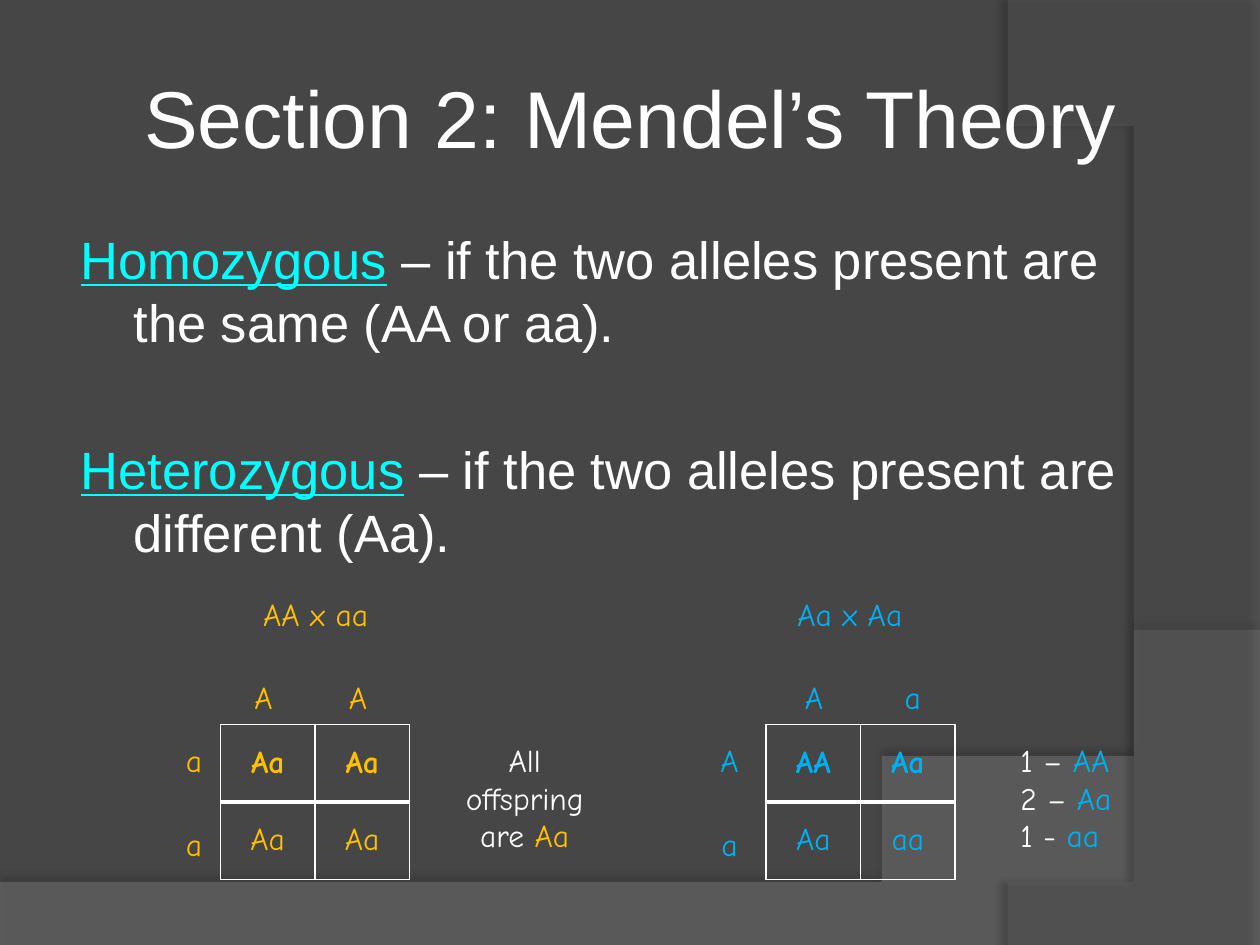
from lxml import etree
from pptx import Presentation
from pptx.dml.color import RGBColor
from pptx.enum.text import MSO_ANCHOR, MSO_AUTO_SIZE, PP_ALIGN
from pptx.oxml.ns import qn
from pptx.util import Inches, Pt

LEFT, CENTER = PP_ALIGN.LEFT, PP_ALIGN.CENTER
MIDDLE = MSO_ANCHOR.MIDDLE
NO_FIT, GROW = MSO_AUTO_SIZE.NONE, MSO_AUTO_SIZE.SHAPE_TO_FIT_TEXT

COLORS = {"background": "464646", "swoosh": "7F7F7F", "arc": "5E5E5E", "shadow": "000000",
          "white": "FFFFFF", "term": "00FFFF", "gold": "FFC000", "blue": "00B0F0"}
TITLE_FORMAT = {"name": "Arial", "size": Pt(46), "bold": False}
BODY_FORMAT = {"name": "Arial", "size": Pt(30), "bold": False}
CROSS_FORMAT = {"name": "Comic Neue", "size": Pt(18), "bold": False}


def add_runs(paragraph, runs, font_format, align=LEFT):
    paragraph.alignment = align
    for text, color in runs:
        run = paragraph.add_run()
        run.text = text
        for attribute, value in font_format.items():
            setattr(run.font, attribute, value)
        run.font.underline = color == "term"
        run.font.color.rgb = RGBColor.from_string(COLORS[color])


def add_label(box, lines, align=CENTER):
    label = slide.shapes.add_textbox(*map(Inches, box))
    frame = label.text_frame
    frame.word_wrap = True
    frame.auto_size = GROW
    for number, runs in enumerate(lines):
        paragraph = frame.add_paragraph() if number else frame.paragraphs[0]
        add_runs(paragraph, runs, CROSS_FORMAT, align)


prs = Presentation()
prs.slide_width, prs.slide_height = Inches(10), Inches(7.5)
slide = prs.slides.add_slide(prs.slide_layouts[1])
slide.background.fill.solid()
slide.background.fill.fore_color.rgb = RGBColor.from_string(COLORS["background"])

BACKDROPS = [
    ("swoosh", 45, [(0, 7.05), (0, 7.51), (10, 7.51)],
     [(10, 5.2), (5.59, 7.29), (3.91, 7.19), (0, 7.05)], (35, 4, 3.5, 270)),
    ("arc", 40, [(10, 0.02), (10, 7.5)],
     [(8.21, 7.5), (9.35, 6.19), (10.18, 3), (8, 0)], (45, 4, 4, 180)),
]
CURVE_STEPS = 60
for depth, (color, opacity, corners, curve, shadow) in enumerate(BACKDROPS):
    points = list(corners)
    for step in range(CURVE_STEPS + 1):
        t = step / CURVE_STEPS
        weights = ((1 - t) ** 3, 3 * t * (1 - t) ** 2, 3 * t ** 2 * (1 - t), t ** 3)
        points.append(tuple(sum(w * p[axis] for w, p in zip(weights, curve)) for axis in (0, 1)))
    builder = slide.shapes.build_freeform(*points[0], scale=Inches(1))
    builder.add_line_segments(points[1:], close=True)
    backdrop = builder.convert_to_shape()
    backdrop.fill.solid()
    backdrop.fill.fore_color.rgb = RGBColor.from_string(COLORS[color])
    backdrop.line.fill.background()
    backdrop.shadow.inherit = False
    properties = backdrop._element.spPr
    fill_color = properties.find(qn("a:solidFill")).find(qn("a:srgbClr"))
    etree.SubElement(fill_color, qn("a:alpha"), val=str(opacity * 1000))
    shadow_opacity, blur, distance, angle = shadow
    outer = etree.SubElement(properties.find(qn("a:effectLst")), qn("a:outerShdw"),
                             blurRad=str(Pt(blur)), dist=str(Pt(distance)),
                             dir=str(angle * 60000), rotWithShape="0")
    shadow_color = etree.SubElement(outer, qn("a:srgbClr"), val=COLORS["shadow"])
    etree.SubElement(shadow_color, qn("a:alpha"), val=str(shadow_opacity * 1000))
    slide.shapes._spTree.insert(2 + depth, backdrop._element)

title, definitions = slide.placeholders
for holder, box in ((title, (0.5, 0.3, 9, 1.25)), (definitions, (0.5, 1.75, 8.92, 4.95))):
    holder.left, holder.top, holder.width, holder.height = map(Inches, box)
    holder.text_frame.word_wrap = True
    holder.text_frame.auto_size = NO_FIT
for side in ("left", "top", "right", "bottom"):
    setattr(title.text_frame, f"margin_{side}", Inches(0.05))
title.text_frame.vertical_anchor = MIDDLE
add_runs(title.text_frame.paragraphs[0], [("Section 2: Mendel’s Theory", "white")],
         TITLE_FORMAT, CENTER)

TERMS = [("Homozygous", " – if the two alleles present are the same (AA or aa).", 4),
         ("Heterozygous", " – if the two alleles present are different (Aa).", 48)]
for number, (term, meaning, space_before) in enumerate(TERMS):
    frame = definitions.text_frame
    paragraph = frame.add_paragraph() if number else frame.paragraphs[0]
    paragraph.space_before = Pt(space_before)
    add_runs(paragraph, [(term, "term"), (meaning, "white")], BODY_FORMAT)
    paragraph_properties = paragraph._p.get_or_add_pPr()
    paragraph_properties.set("marL", str(Inches(0.46)))
    paragraph_properties.set("indent", str(Inches(-0.42)))
    etree.SubElement(paragraph_properties, qn("a:buNone"))

CROSSES = [
    {"color": "gold", "left": 1.75, "offspring": [["Aa", "Aa"], ["Aa", "Aa"]],
     "heading": ("AA x aa", 1.92, 1.17),
     "columns": [("A", 1.92, 0.42), ("A", 2.67, 0.42)], "column_align": LEFT,
     "rows": ["a", "a"], "row_left": 1.33,
     "result": [[("All offspring are ", "white"), ("Aa", "gold")]],
     "result_box": (3.5, 5.83, 1.33, 1.01), "result_align": CENTER},
    {"color": "blue", "left": 6.08, "offspring": [["AA", "Aa"], ["Aa", "aa"]],
     "heading": ("Aa x Aa", 6.08, 1.33),
     "columns": [("A", 6.25, 0.42), ("a", 7.08, 0.33)], "column_align": CENTER,
     "rows": ["A", "a"], "row_left": 5.58,
     "result": [[(count, "white"), (genotype, "blue")] for count, genotype in
                (("1 – ", "AA"), ("2 – ", "Aa"), ("1 - ", "aa"))],
     "result_box": (8, 5.83, 1, 1.01), "result_align": LEFT},
]
for cross in CROSSES:
    color = cross["color"]
    punnett = slide.shapes.add_table(2, 2, Inches(cross["left"]), Inches(5.75),
                                     Inches(1.5), Inches(1.23)).table
    punnett.first_row = punnett.horz_banding = False
    for row, genotypes in enumerate(cross["offspring"]):
        for column, genotype in enumerate(genotypes):
            cell = punnett.cell(row, column)
            cell.vertical_anchor = MIDDLE
            add_runs(cell.text_frame.paragraphs[0], [(genotype, color)],
                     CROSS_FORMAT | {"bold": row == 0}, CENTER)
            cell_properties = cell._tc.get_or_add_tcPr()
            for side in "LRTB":
                weight = 3 if row == 0 and side == "B" else 1
                border = etree.SubElement(cell_properties, qn(f"a:ln{side}"), w=str(Pt(weight)))
                stroke = etree.SubElement(border, qn("a:solidFill"))
                etree.SubElement(stroke, qn("a:srgbClr"), val=COLORS["white"])
            cell.fill.background()

    heading, heading_left, heading_width = cross["heading"]
    add_label((heading_left, 4.67, heading_width, 0.4), [[(heading, color)]])
    for allele, left, width in cross["columns"]:
        add_label((left, 5.33, width, 0.4), [[(allele, color)]], cross["column_align"])
    for allele, top in zip(cross["rows"], (5.83, 6.5)):
        add_label((cross["row_left"], top, 0.42, 0.4), [[(allele, color)]])
    add_label(cross["result_box"], cross["result"], cross["result_align"])

prs.save("out.pptx")
